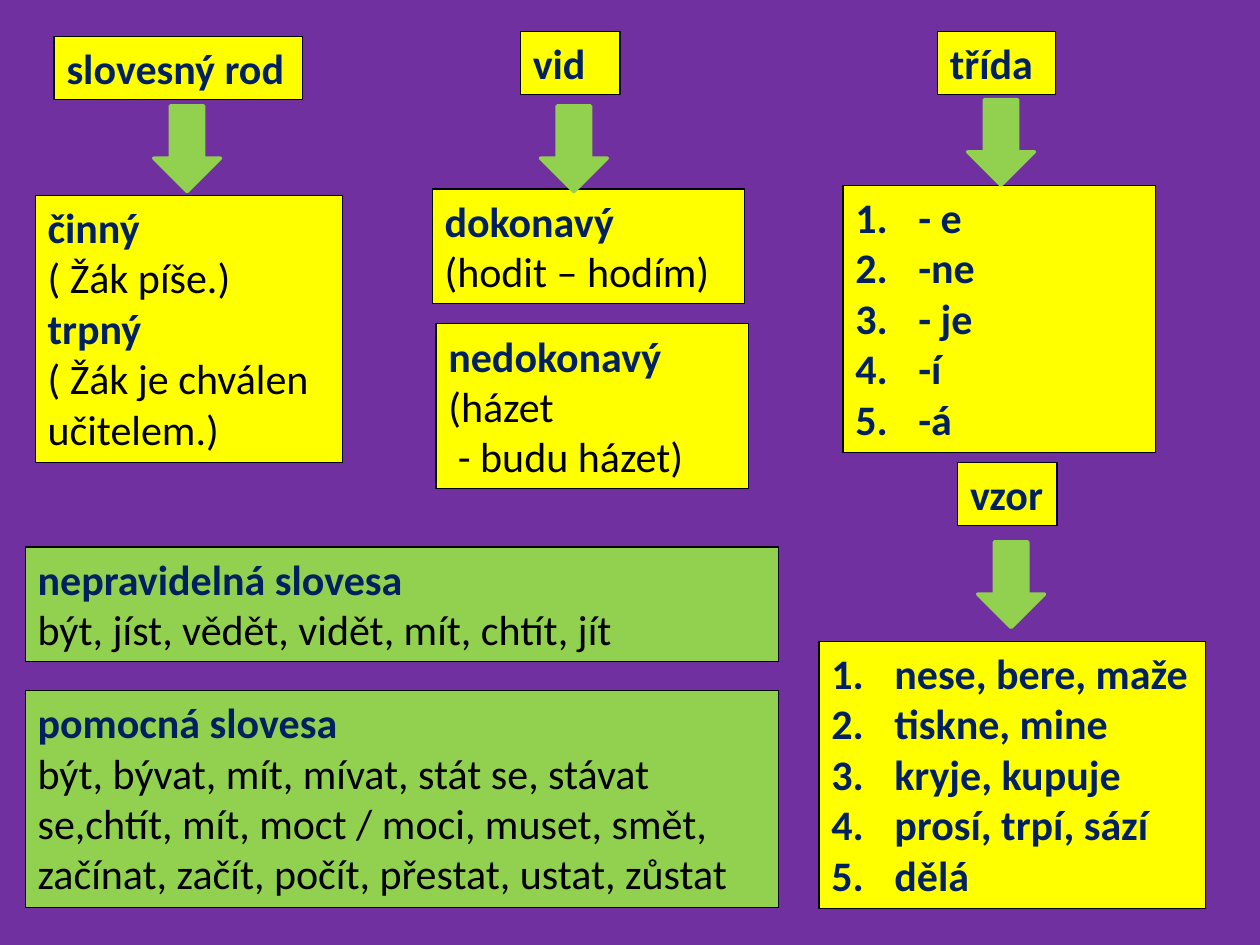
from dataclasses import dataclass

from lxml.etree import SubElement
from pptx import Presentation
from pptx.dml.color import RGBColor
from pptx.enum.shapes import MSO_SHAPE
from pptx.enum.text import MSO_ANCHOR, MSO_AUTO_SIZE, PP_ALIGN
from pptx.oxml.ns import qn
from pptx.slide import Slide
from pptx.util import Inches, Pt

PURPLE = RGBColor(0x70, 0x30, 0xA0)
YELLOW = RGBColor(0xFF, 0xFF, 0x00)
GREEN = RGBColor(0x92, 0xD0, 0x50)
NAVY = RGBColor(0x00, 0x20, 0x60)
BLACK = RGBColor(0x00, 0x00, 0x00)
FONT = "Calibri"
NUMBER_INDENT = Inches(0.5)
ARROW_WIDTH, ARROW_HEIGHT = Inches(0.53), Inches(0.68)


@dataclass(frozen=True)
class Card:
    left: float
    top: float
    width: float
    height: float
    lines: tuple[str, ...]
    headings: tuple[int, ...] = (0,)
    fill: RGBColor = YELLOW
    numbered: bool = False


@dataclass(frozen=True)
class Arrow:
    left: float
    top: float


CARDS = (
    Card(0.43, 0.29, 1.97, 0.5, ("slovesný rod",)),
    Card(0.28, 1.55, 2.44, 2.12,
         ("činný", "( Žák píše.)", "trpný", "( Žák je chválen učitelem.)"),
         headings=(0, 2)),
    Card(4.13, 0.25, 0.79, 0.5, ("vid",)),
    Card(3.43, 1.5, 2.48, 0.91, ("dokonavý", "(hodit – hodím)")),
    Card(3.46, 2.57, 2.48, 1.31, ("nedokonavý", "(házet", " - budu házet)")),
    Card(7.44, 0.25, 0.94, 0.5, ("třída",)),
    Card(6.69, 1.47, 2.48, 2.12, ("- e", "-ne", "- je", "-í", "-á"),
         numbered=True),
    Card(6.5, 5.09, 3.07, 2.12,
         ("nese, bere, maže", "tiskne, mine", "kryje, kupuje",
          "prosí, trpí, sází", "dělá"),
         numbered=True),
    Card(7.6, 3.67, 0.79, 0.5, ("vzor",)),
    Card(0.2, 4.34, 5.98, 0.91,
         ("nepravidelná slovesa", "být, jíst, vědět, vidět, mít, chtít, jít"),
         fill=GREEN),
    Card(0.2, 5.48, 5.98, 1.72,
         ("pomocná slovesa",
          "být, bývat, mít, mívat, stát se, stávat se,chtít, mít, "
          "moct / moci, muset, smět, začínat, začít, počít, přestat, "
          "ustat, zůstat"),
         fill=GREEN),
)

ARROWS = (Arrow(1.22, 0.84), Arrow(4.29, 0.84), Arrow(7.68, 0.79), Arrow(7.76, 4.3))


def number_paragraph(paragraph) -> None:
    properties = paragraph._p.get_or_add_pPr()
    properties.set("marL", str(NUMBER_INDENT))
    properties.set("indent", str(-NUMBER_INDENT))
    SubElement(properties, qn("a:buFont"), typeface="+mj-lt")
    SubElement(properties, qn("a:buAutoNum"), type="arabicPeriod")


def draw_card(slide: Slide, card: Card) -> None:
    box = slide.shapes.add_textbox(
        Inches(card.left), Inches(card.top), Inches(card.width), Inches(card.height))
    box.fill.solid()
    box.fill.fore_color.rgb = card.fill
    box.line.color.rgb = BLACK
    box.line.width = Pt(0.75)
    frame = box.text_frame
    frame.text = "\n".join(card.lines)
    frame.word_wrap = True
    frame.auto_size = MSO_AUTO_SIZE.SHAPE_TO_FIT_TEXT
    frame.vertical_anchor = MSO_ANCHOR.TOP
    for index, paragraph in enumerate(frame.paragraphs):
        paragraph.alignment = PP_ALIGN.LEFT
        if card.numbered:
            number_paragraph(paragraph)
        emphasized = card.numbered or index in card.headings
        for run in paragraph.runs:
            run.font.name = FONT
            run.font.size = Pt(24)
            run.font.bold = emphasized
            run.font.color.rgb = NAVY if emphasized else BLACK


def draw_arrow(slide: Slide, arrow: Arrow) -> None:
    pointer = slide.shapes.add_shape(
        MSO_SHAPE.DOWN_ARROW, Inches(arrow.left), Inches(arrow.top),
        ARROW_WIDTH, ARROW_HEIGHT)
    pointer.shadow.inherit = False
    pointer.fill.solid()
    pointer.fill.fore_color.rgb = GREEN
    pointer.line.color.rgb = GREEN
    pointer.line.width = Pt(2)


def main() -> None:
    presentation = Presentation()
    presentation.slide_width = Inches(10)
    presentation.slide_height = Inches(7.5)
    slide = presentation.slides.add_slide(presentation.slide_layouts[6])
    slide.background.fill.solid()
    slide.background.fill.fore_color.rgb = PURPLE
    for card in CARDS:
        draw_card(slide, card)
    for arrow in ARROWS:
        draw_arrow(slide, arrow)
    presentation.save("out.pptx")


if __name__ == "__main__":
    main()
